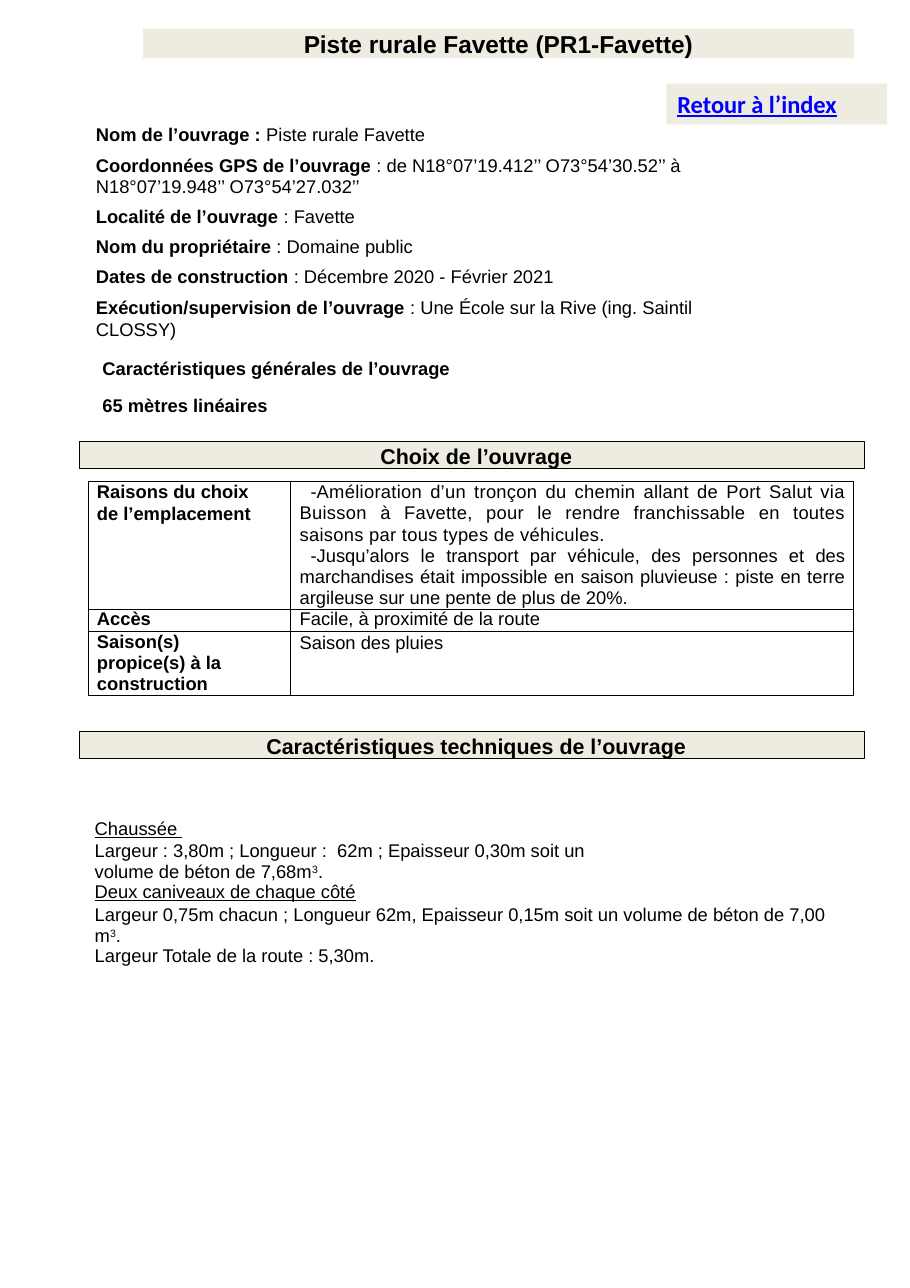
from lxml import etree
from pptx import Presentation
from pptx.dml.color import RGBColor
from pptx.enum import shapes, text
from pptx.oxml.ns import qn
from pptx.util import Inches, Pt

COLOURS = {"ink": "000000", "band": "EEECE1", "link": "0000FF"}
LEFT, WIDTH = 0.8, 6.95
TITLE = "Piste rurale Favette (PR1-Favette)"
INDEX = "Retour à l’index"
HEADINGS = [("Choix de l’ouvrage", 4.01),
            ("Caractéristiques techniques de l’ouvrage", 6.64)]

# A paragraph is (spans, format); a span is (text, style):
# b bold, u underlined, ^ raised, w slightly wider letter spacing.
IDENTITY = [
    ([("Nom de l’ouvrage : ", "b"), ("Piste rurale Favette", "")], {"before": 6.4}),
    ([("Coordonnées GPS de l’ouvrage ", "b"),
      (": de N18°07’19.412’’ O73°54’30.52’’ à N18°07’19.948’’ O73°54’27.032’’", "")],
     {"before": 6.3, "line": 13.8, "right": 1.3}),
    ([("Localité de l’ouvrage ", "b"), (": Favette", "")], {"before": 5}),
    ([("Nom du propriétaire ", "b"), (": Domaine public", "")], {"before": 5.4}),
    ([("Dates de construction ", "b"), (": Décembre 2020 - Février 2021", "")],
     {"before": 5.4}),
    ([("Exécution/supervision de l’ouvrage ", "b"),
      (": Une École sur la Rive (ing. Saintil CLOSSY)", "")],
     {"before": 5.4, "right": 1.3}),
]
GENERAL = [
    ([("Caractéristiques générales de l’ouvrage", "b")], {"before": 1}),
    ([("65 mètres linéaires", "b")], {"before": 10.1}),
]
TECHNICAL = [
    ([("Chaussée ", "u")], {"before": 1, "line": 14.1}),
    ([("Largeur : 3,80m ; Longueur :  62m ; Epaisseur 0,30m soit un volume de béton de 7,68m", ""),
      ("3", "^"), (".", "")], {"before": 0.7, "line": 13.8, "right": 2.2}),
    ([("Deux caniveaux de chaque côté", "u")], {"line": 13.2}),
    ([("Largeur 0,75m chacun ; Longueur 62m, Epaisseur 0,15m soit un volume de béton de 7,00 m", ""),
      ("3", "^"), (".", "")], {"before": 0.7, "line": 13.8, "right": 0.1}),
    ([("Largeur Totale de la route : 5,30m.", "")], {"line": 13.4}),
]
REASON = {"line": 13.8, "right": 0.07, "first": 0.1, "bullet": "-",
          "align": text.PP_ALIGN.JUSTIFY}
CHOICE = [
    ([([("Raisons du choix", "b")], {"line": 13.6}),
      ([("de l’emplacement", "b")], {"line": 14.1})],
     [([("Amélioration d’un tronçon du chemin allant de Port Salut via Buisson à Favette, "
         "pour le rendre franchissable en toutes saisons par tous types de véhicules.", "w")],
       REASON | {"before": 0.5}),
      ([("Jusqu’alors le transport par véhicule, des personnes et des marchandises était "
         "impossible en saison pluvieuse : piste en terre argileuse sur une pente de plus "
         "de 20%.", "")], REASON)]),
    ([([("Accès", "b")], {"line": 13.3})],
     [([("Facile, à proximité de la route", "")], {"line": 13.3})]),
    ([([("Saison(s) propice(s) à la construction", "b")], {"line": 13.8, "right": 0.4})],
     [([("Saison des pluies", "")], {"line": 14.1})]),
]
COLUMN_WIDTHS = [1.84, 5.11]
ROW_HEIGHTS = [1.16, 0.2, 0.58]


def colour(name):
    return RGBColor.from_string(COLOURS[name])


def set_font(font, size, name="Arial", ink="ink", bold=False):
    font.name, font.size, font.bold = name, Pt(size), bold
    font.color.rgb = colour(ink)


def prepare(frame, top=0.0, side=0.0, bottom=0.0):
    frame.word_wrap = True
    frame.auto_size = text.MSO_AUTO_SIZE.NONE
    frame.vertical_anchor = text.MSO_ANCHOR.TOP
    frame.margin_left = frame.margin_right = Inches(side)
    frame.margin_top, frame.margin_bottom = Inches(top), Inches(bottom)


def set_indents(para, left, right=0, first=0):
    properties = para._p.get_or_add_pPr()
    for key, inches in [("marL", left), ("marR", right), ("indent", first)]:
        properties.set(key, str(Inches(inches)))
    return properties


def write(frame, paragraphs, indent):
    for number, (spans, form) in enumerate(paragraphs):
        para = frame.add_paragraph() if number else frame.paragraphs[0]
        set_font(para.font, 12)
        para.alignment = form.get("align", text.PP_ALIGN.LEFT)
        para.space_before = Pt(form.get("before", 0))
        if "line" in form:
            para.line_spacing = Pt(form["line"])
        properties = set_indents(para, indent, form.get("right", 0), form.get("first", 0))
        if "bullet" in form:
            defaults = properties.find(qn("a:defRPr"))
            defaults.addprevious(etree.Element(qn("a:buFont"), typeface="Arial"))
            defaults.addprevious(etree.Element(qn("a:buChar"), char=form["bullet"]))
        for words, style in spans:
            span = para.add_run()
            span.text = words
            set_font(span.font, 12, bold="b" in style)
            span.font.underline = "u" in style
            if "^" in style:
                span._r.get_or_add_rPr().set("baseline", "28000")
            if "w" in style:
                span._r.get_or_add_rPr().set("spc", "20")


def add_text(page, paragraphs, left, top, width, height, indent, inset=0.01):
    box = page.shapes.add_textbox(*map(Inches, (left, top, width, height)))
    prepare(box.text_frame, inset)
    write(box.text_frame, paragraphs, indent)


def add_band(page, left, top, width, height):
    band = page.shapes.add_shape(shapes.MSO_SHAPE.RECTANGLE,
                                 *map(Inches, (left, top, width, height)))
    band.shadow.inherit = False
    band.fill.solid()
    band.fill.fore_color.rgb = colour("band")
    band.line.fill.background()
    return band


def add_heading(page, words, top):
    band = add_band(page, 0.72, top, 7.13, 0.24)
    band.line.color.rgb = colour("ink")
    band.line.width = Pt(0.48)
    prepare(band.text_frame, 0.01)
    para = band.text_frame.paragraphs[0]
    para.text = words
    para.alignment = text.PP_ALIGN.CENTER
    para.space_before = Pt(0.5)
    set_indents(para, 0.08)
    set_font(para.runs[0].font, 14, bold=True)


def outline(cell):
    properties = cell._tc.get_or_add_tcPr()
    for place, side in enumerate(("a:lnL", "a:lnR", "a:lnT", "a:lnB")):
        line = etree.Element(qn(side), w=str(Pt(0.5)))
        solid = etree.SubElement(line, qn("a:solidFill"))
        etree.SubElement(solid, qn("a:srgbClr"), val=COLOURS["ink"])
        properties.insert(place, line)


def add_choice_table(page):
    table = page.shapes.add_table(
        len(ROW_HEIGHTS), len(COLUMN_WIDTHS), Inches(LEFT), Inches(4.37),
        Inches(sum(COLUMN_WIDTHS)), Inches(sum(ROW_HEIGHTS))).table
    table.first_row = table.horz_banding = False
    for column, width in zip(table.columns, COLUMN_WIDTHS):
        column.width = Inches(width)
    for row, height, contents in zip(table.rows, ROW_HEIGHTS, CHOICE):
        row.height = Inches(height)
        for cell, paragraphs in zip(row.cells, contents):
            cell.margin_left = cell.margin_right = 0
            cell.margin_top = cell.margin_bottom = 0
            cell.fill.background()
            outline(cell)
            write(cell.text_frame, paragraphs, 0.08)


def add_title(page):
    title = page.shapes.title
    title.left, title.top, title.width, title.height = map(Inches, (1.3, 0.26, 6.45, 0.27))
    title.fill.solid()
    title.fill.fore_color.rgb = colour("band")
    prepare(title.text_frame)
    para = title.text_frame.paragraphs[0]
    para.text = TITLE
    para.alignment = text.PP_ALIGN.CENTER
    para.space_before = Pt(0.2)
    set_font(para.runs[0].font, 16, bold=True)


def add_index_button(page):
    button = add_band(page, 6.05, 0.76, 2, 0.37)
    prepare(button.text_frame, 0.05, 0.1, 0.05)
    para = button.text_frame.paragraphs[0]
    para.text = INDEX
    para.alignment = text.PP_ALIGN.LEFT
    set_font(para.runs[0].font, 16, "Calibri", "link", True)
    para.runs[0].font.underline = True


def main():
    deck = Presentation()
    deck.slide_width, deck.slide_height = Inches(8.26), Inches(11.69)
    page = deck.slides.add_slide(deck.slide_layouts[5])
    add_title(page)
    add_text(page, IDENTITY, LEFT, 1.03, WIDTH, 1.87, 0.07, inset=0.09)
    add_text(page, GENERAL, 0.92, 3.23, 3.19, 0.57, 0.01)
    for words, top in HEADINGS:
        add_heading(page, words, top)
    add_choice_table(page)
    add_text(page, TECHNICAL, LEFT, 7.41, WIDTH, 1.39, 0.06)
    add_index_button(page)
    deck.save("out.pptx")


if __name__ == "__main__":
    main()
